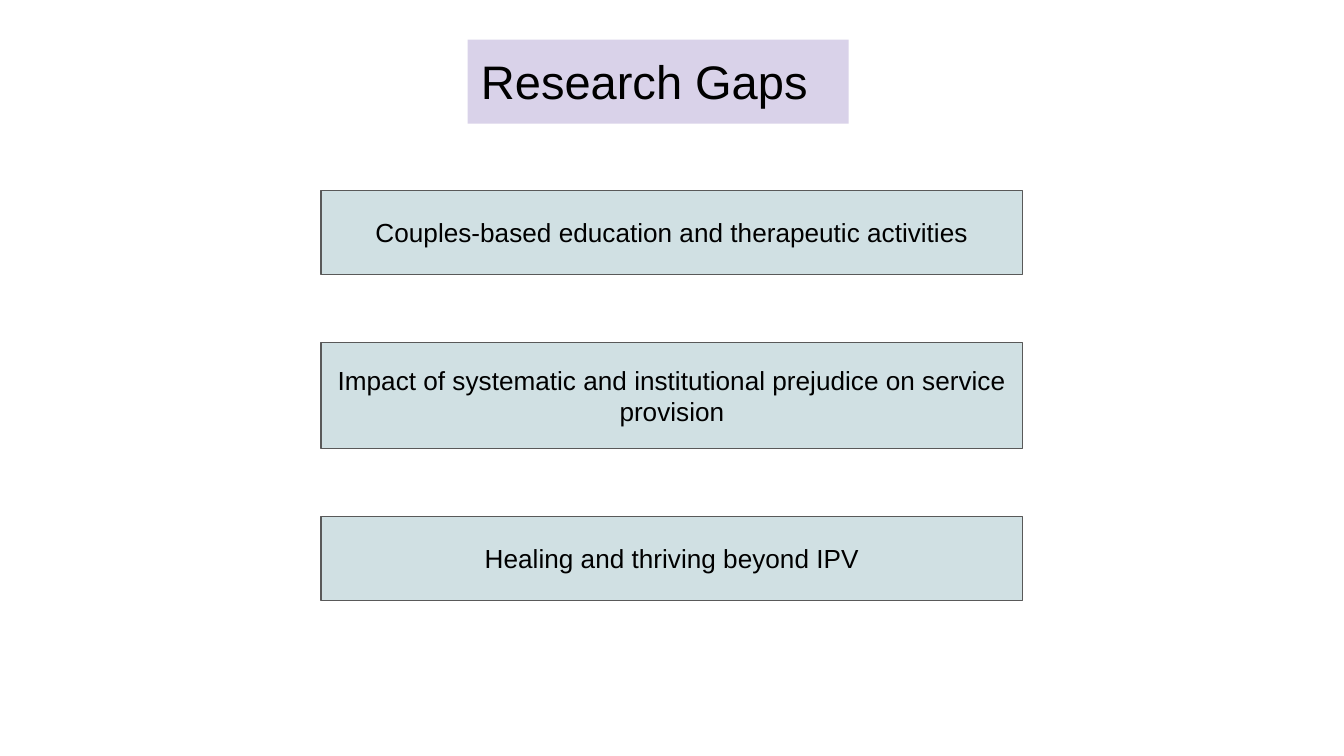
from dataclasses import dataclass

from pptx import Presentation
from pptx.dml.color import RGBColor
from pptx.enum.shapes import MSO_SHAPE
from pptx.enum.text import MSO_ANCHOR, PP_ALIGN
from pptx.util import Cm, Pt

BLACK = RGBColor(0x00, 0x00, 0x00)
LILAC = RGBColor(0xD9, 0xD2, 0xE9)
PALE_TEAL = RGBColor(0xD0, 0xE0, 0xE3)
GREY = RGBColor(0x59, 0x59, 0x59)

FONT = "Arial"
INSET = 0.25
GAP_LEFT, GAP_TOP, GAP_WIDTH = 6.07, 3.6, 13.26
SPACING = 1.28


@dataclass
class Box:
    """A filled rectangle with text; lengths in cm, text size in points."""
    text: str
    left: float
    top: float
    width: float
    height: float
    fill: RGBColor
    size: float
    align: PP_ALIGN = PP_ALIGN.CENTER
    anchor: MSO_ANCHOR = MSO_ANCHOR.MIDDLE
    line: RGBColor | None = None


def draw_box(s, box: Box) -> None:
    sp = s.shapes.add_shape(MSO_SHAPE.RECTANGLE, Cm(box.left), Cm(box.top),
                            Cm(box.width), Cm(box.height))
    sp.shadow.inherit = False
    sp.fill.solid()
    sp.fill.fore_color.rgb = box.fill
    if box.line is None:
        sp.line.fill.background()
    else:
        sp.line.color.rgb = box.line
        sp.line.width = Pt(0.75)

    tf = sp.text_frame
    tf.word_wrap = True
    tf.vertical_anchor = box.anchor
    tf.margin_left = tf.margin_right = Cm(INSET)
    tf.margin_top = tf.margin_bottom = Cm(INSET)
    p = tf.paragraphs[0]
    p.alignment = box.align
    r = p.add_run()
    r.text = box.text
    r.font.name = FONT
    r.font.size = Pt(box.size)
    r.font.color.rgb = BLACK


def main() -> None:
    prs = Presentation()
    prs.slide_width, prs.slide_height = Cm(25.4), Cm(14.29)
    s = prs.slides.add_slide(prs.slide_layouts[6])

    draw_box(s, Box("Research Gaps", 8.84, 0.75, 7.2, 1.59, LILAC, 25.2,
                    PP_ALIGN.LEFT, MSO_ANCHOR.TOP))

    gaps = [
        ("Couples-based education and therapeutic activities", 1.59),
        ("Impact of systematic and institutional prejudice on service provision", 2.01),
        ("Healing and thriving beyond IPV", 1.59),
    ]
    top = GAP_TOP
    for text, height in gaps:
        draw_box(s, Box(text, GAP_LEFT, top, GAP_WIDTH, height, PALE_TEAL, 14, line=GREY))
        top += height + SPACING

    prs.save("out.pptx")


if __name__ == "__main__":
    main()
